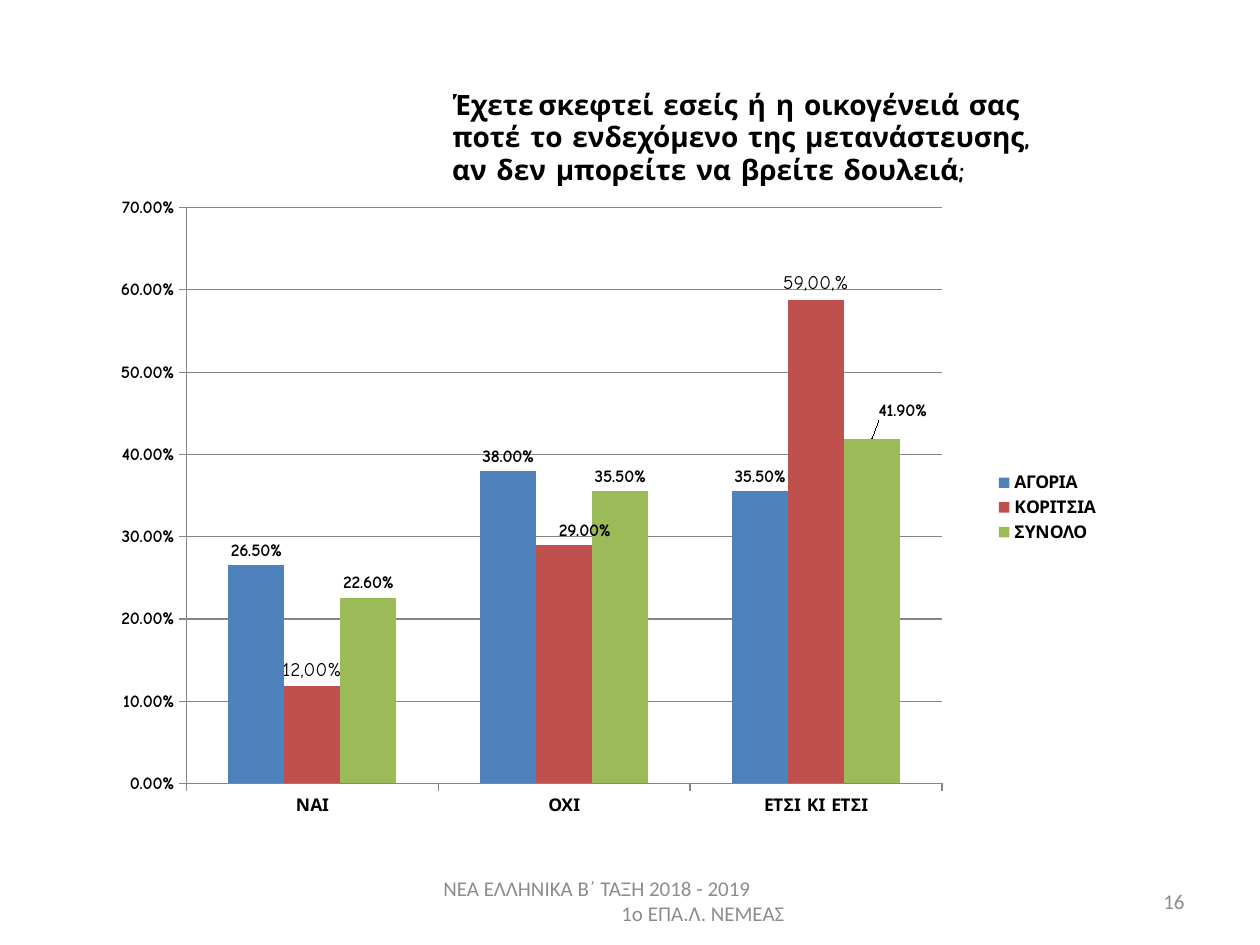
from pptx import Presentation
from pptx.chart.data import CategoryChartData
from pptx.dml.color import RGBColor
from pptx.enum.chart import XL_CHART_TYPE as ChartType
from pptx.enum.chart import XL_LABEL_POSITION as LabelPosition
from pptx.enum.chart import XL_LEGEND_POSITION as LegendPosition
from pptx.enum.chart import XL_TICK_MARK as TickMark
from pptx.enum.text import MSO_ANCHOR as Anchor
from pptx.enum.text import PP_ALIGN as Align
from pptx.oxml import parse_xml
from pptx.oxml.ns import nsdecls, qn
from pptx.util import Pt

EMU_PER_PX = 914400 / 126
BLACK = RGBColor(0x00, 0x00, 0x00)
RED = RGBColor(0xFF, 0x00, 0x00)
GREY = RGBColor(0x8C, 0x8C, 0x8C)
LINE_GREY = RGBColor(0x86, 0x86, 0x86)
BLUE_BAR = RGBColor(0x4F, 0x81, 0xBD)
RED_BAR = RGBColor(0xC0, 0x50, 0x4D)
GREEN_BAR = RGBColor(0x9B, 0xBB, 0x59)
CHART_FONT = "Comic Neue"
BODY_FONT = "Calibri"
PERCENT = "0.00%"

CATEGORIES = ["ΝΑΙ", "ΟΧΙ", "ΕΤΣΙ ΚΙ ΕΤΣΙ"]
SERIES = [
    ("ΑΓΟΡΙΑ", [0.265, 0.38, 0.355], BLUE_BAR),
    ("ΚΟΡΙΤΣΙΑ", [0.118, 0.29, 0.588], RED_BAR),
    ("ΣΥΝΟΛΟ", [0.226, 0.355, 0.419], GREEN_BAR),
]
CUSTOM_LABELS = [(1, 0, "12,00%"), (1, 2, "59,00,%")]
MOVED_LABELS = [(1, 1, 0.02, 0), (2, 2, 0.03, -0.02)]
QUESTION = [
    ("Έχετε", CHART_FONT, 16, BLACK),
    (" ", BODY_FONT, 12, RED),
    ("σκεφτεί εσείς ή η οικογένειά σας ποτέ το ενδεχόμενο της μετανάστευσης, "
     "αν δεν μπορείτε να βρείτε δουλειά;", CHART_FONT, 16, BLACK),
]


def px(length):
    """Turn pixels into EMU."""
    return round(length * EMU_PER_PX)


def set_font(font, name, size, color, bold=False):
    """Set the common properties of a font."""
    font.name, font.size, font.bold = name, Pt(size), bold
    font.color.rgb = color


def manual_layout(**values):
    """Return a chart layout element holding the given values."""
    parts = "".join(f'<c:{key} val="{value}"/>' for key, value in values.items())
    return parse_xml(f'<c:layout {nsdecls("c")}><c:manualLayout>{parts}'
                     "</c:manualLayout></c:layout>")


def style_axes(chart):
    """Style both axes and the gridlines."""
    for axis in (chart.category_axis, chart.value_axis):
        axis.major_tick_mark = TickMark.OUTSIDE
        axis.minor_tick_mark = TickMark.NONE
        axis.format.line.color.rgb = LINE_GREY
    values = chart.value_axis
    values.minimum_scale, values.maximum_scale, values.major_unit = 0, 0.7, 0.1
    values.tick_labels.number_format = PERCENT
    values.tick_labels.number_format_is_linked = False
    values.has_major_gridlines = True
    values.major_gridlines.format.line.color.rgb = LINE_GREY


def style_series(plot):
    """Colour the bars and place their labels."""
    for series, (_, _, color) in zip(plot.series, SERIES):
        series.format.fill.solid()
        series.format.fill.fore_color.rgb = color
        labels = series.data_labels
        labels.show_value = True
        labels.number_format, labels.number_format_is_linked = PERCENT, False
        labels.position = LabelPosition.OUTSIDE_END
        set_font(labels.font, CHART_FONT, 10, BLACK, True)
    for row, column, text in CUSTOM_LABELS:
        label = plot.series[row].points[column].data_label
        para = label.text_frame.paragraphs[0]
        span = para.add_run()
        span.text = text
        set_font(span.font, CHART_FONT, 11, BLACK)
        label.position = LabelPosition.OUTSIDE_END
    for row, column, x, y in MOVED_LABELS:
        label = plot.series[row].points[column].data_label
        set_font(label.font, CHART_FONT, 10, BLACK, True)
        label.position = LabelPosition.OUTSIDE_END
        labels = plot.series[row].data_labels._element
        for item in labels.findall(qn("c:dLbl")):
            index = item.find(qn("c:idx"))
            if index.get("val") == str(column):
                index.addnext(manual_layout(x=x, y=y))


def add_answers_chart(page, left, top, width, height):
    """Add the clustered columns with their legend."""
    data = CategoryChartData(number_format=PERCENT)
    data.categories = CATEGORIES
    for name, values, _ in SERIES:
        data.add_series(name, values)
    chart = page.shapes.add_chart(ChartType.COLUMN_CLUSTERED, px(left), px(top),
                                  px(width), px(height), data).chart
    set_font(chart.font, CHART_FONT, 10, BLACK, True)
    chart.has_title = False
    chart.has_legend = True
    chart.legend.position = LegendPosition.RIGHT
    chart.legend.include_in_layout = False
    plot = chart.plots[0]
    plot.gap_width, plot.overlap, plot.vary_by_categories = 150, 0, False
    style_axes(chart)
    style_series(plot)
    area = chart._chartSpace.find(".//" + qn("c:plotArea"))
    for layout in area.findall(qn("c:layout")):
        area.remove(layout)
    area.insert(0, manual_layout(layoutTarget="inner", xMode="edge", yMode="edge",
                                 x=0.096, y=0.045, w=0.738, h=0.874))


def add_question(page, left, top, width, height):
    """Add the one-cell table that holds the question."""
    table = page.shapes.add_table(1, 1, px(left), px(top), px(width), px(height)).table
    table.first_row = table.horz_banding = False
    cell = table.cell(0, 0)
    cell.fill.background()
    cell.vertical_anchor = Anchor.BOTTOM
    cell.margin_left = cell.margin_right = cell.margin_top = cell.margin_bottom = 0
    para = cell.text_frame.paragraphs[0]
    for text, name, size, color in QUESTION:
        span = para.add_run()
        span.text = text
        set_font(span.font, name, size, color, True)


def add_footer(page, left, top, width, height, lines, align):
    """Add grey footer lines, each with its own left indent."""
    box = page.shapes.add_textbox(px(left), px(top), px(width), px(height))
    frame = box.text_frame
    frame.word_wrap = True
    frame.vertical_anchor = Anchor.MIDDLE
    for number, (text, indent) in enumerate(lines):
        para = frame.add_paragraph() if number else frame.paragraphs[0]
        para.text, para.alignment = text, align
        para._p.get_or_add_pPr().set("marL", str(px(indent)))
        set_font(para.font, BODY_FONT, 12, GREY)


def main():
    """Build the slide and save it."""
    deck = Presentation()
    deck.slide_width, deck.slide_height = px(1260), px(945)
    page = deck.slides.add_slide(deck.slide_layouts[6])
    add_answers_chart(page, 88, 178, 1024, 659)
    add_question(page, 452, 69, 605, 118)
    add_footer(page, 431, 876, 399, 50,
               [("ΝΕΑ ΕΛΛΗΝΙΚΑ Β΄ ΤΑΞΗ 2018 - 2019", 0), ("1ο ΕΠΑ.Λ. ΝΕΜΕΑΣ", 178)],
               Align.LEFT)
    add_footer(page, 903, 876, 294, 50, [("16", 0)], Align.RIGHT)
    deck.save("out.pptx")


if __name__ == "__main__":
    main()
